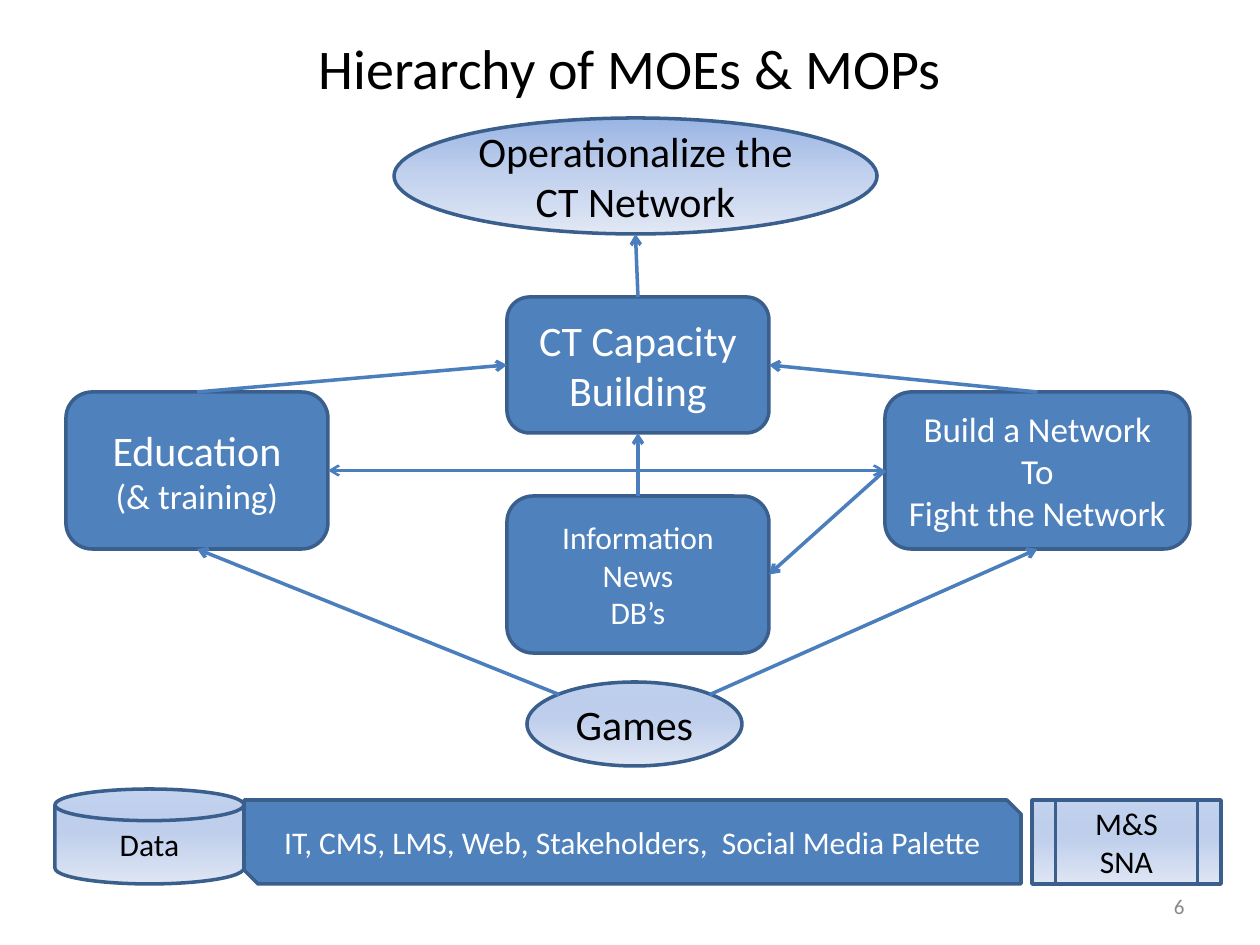
from dataclasses import dataclass

from lxml import etree
from pptx import Presentation
from pptx.dml.color import RGBColor
from pptx.enum.shapes import MSO_CONNECTOR, MSO_SHAPE
from pptx.enum.text import MSO_ANCHOR, PP_ALIGN
from pptx.oxml.ns import qn
from pptx.util import Emu, Pt

EMU_PER_PX = 914400 / 126
FONT = "Calibri"
COLORS = {
    "black": "000000",
    "white": "FFFFFF",
    "number": "898989",
    "block": "4F81BD",
    "outline": "3A5F8C",
    "arrow": "4B7EBC",
}
GRADIENT = [(0, "9AB5E4"), (50, "C2D1ED"), (100, "E1E8F5")]

ELLIPSE = MSO_SHAPE.OVAL
ROUNDED = MSO_SHAPE.ROUNDED_RECTANGLE
SNIPPED = MSO_SHAPE.SNIP_2_DIAG_RECTANGLE
DISK = MSO_SHAPE.FLOWCHART_MAGNETIC_DISK
PROCESS = MSO_SHAPE.FLOWCHART_PREDEFINED_PROCESS
STRAIGHT = MSO_CONNECTOR.STRAIGHT
CURVE = MSO_CONNECTOR.CURVE
CENTER = PP_ALIGN.CENTER
RIGHT = PP_ALIGN.RIGHT
MIDDLE = MSO_ANCHOR.MIDDLE

# Connection sites as fractions of a node's width and height
SITES = {
    "top": (0.5, 0),
    "bottom": (0.5, 1),
    "left": (0, 0.5),
    "right": (1, 0.5),
    "upper left": (0.15, 0.15),
    "upper right": (0.85, 0.15),
}


@dataclass(frozen=True)
class Line:
    text: str
    size: int


@dataclass(frozen=True)
class Node:
    kind: MSO_SHAPE
    left: int
    top: int
    width: int
    height: int
    lines: tuple[Line, ...]
    gradient: bool = False
    first_alpha: int = 100

    def site(self, name: str) -> tuple[Emu, Emu]:
        across, down = SITES[name]
        return px(self.left + across * self.width), px(self.top + down * self.height)


@dataclass(frozen=True)
class Link:
    start: str
    start_site: str
    end: str
    end_site: str
    kind: MSO_CONNECTOR = STRAIGHT
    width: float = 2
    both_ends: bool = False


def same_size(size: int, *texts: str) -> tuple[Line, ...]:
    return tuple(Line(text, size) for text in texts)


NODES = {
    "goal": Node(ELLIPSE, 394, 118, 483, 116,
                 same_size(24, "Operationalize the CT Network"), True),
    "capacity": Node(ROUNDED, 507, 297, 262, 136, same_size(24, "CT Capacity Building")),
    "education": Node(ROUNDED, 66, 392, 262, 157,
                      (Line("Education", 24), Line("(& training)", 20))),
    "network": Node(ROUNDED, 885, 392, 305, 157,
                    same_size(20, "Build a Network", "To", "Fight the Network")),
    "information": Node(ROUNDED, 507, 496, 262, 157,
                        same_size(18, "Information", "News", "DB’s")),
    "games": Node(ELLIPSE, 527, 682, 215, 84, same_size(24, "Games"), True, 61),
    "platform": Node(SNIPPED, 244, 800, 777, 84,
                     same_size(18, "IT, CMS, LMS, Web, Stakeholders,  Social Media Palette")),
    "data": Node(DISK, 55, 789, 189, 95, same_size(18, "Data"), True, 56),
    "modelling": Node(PROCESS, 1032, 800, 189, 84, same_size(18, "M&S", "SNA"), True, 56),
}

LINKS = [
    Link("education", "right", "network", "left", CURVE, 1.5, True),
    Link("education", "top", "capacity", "left"),
    Link("capacity", "top", "goal", "bottom"),
    Link("network", "top", "capacity", "right"),
    Link("information", "top", "capacity", "bottom"),
    Link("games", "upper right", "network", "bottom"),
    Link("games", "upper left", "education", "bottom"),
    Link("network", "left", "information", "right"),
]


def px(length: float) -> Emu:
    return Emu(round(length * EMU_PER_PX))


def rgb(name: str) -> RGBColor:
    return RGBColor.from_string(COLORS[name])


def write_lines(shape, lines: tuple[Line, ...], color: str, align: PP_ALIGN = CENTER) -> None:
    frame = shape.text_frame
    frame.word_wrap = True
    frame.vertical_anchor = MIDDLE
    frame.text = "\n".join(line.text for line in lines)
    for paragraph, line in zip(frame.paragraphs, lines):
        paragraph.alignment = align
        for run in paragraph.runs:
            run.font.name = FONT
            run.font.size = Pt(line.size)
            run.font.color.rgb = rgb(color)


def fill_gradient(shape, first_alpha: int) -> None:
    """Fill from top to bottom, with the first stop as opaque as given in percent."""
    shape.fill.gradient()
    shape.fill.gradient_angle = 270
    stops = shape._element.spPr.find(qn("a:gradFill")).find(qn("a:gsLst"))
    for stop in list(stops):
        stops.remove(stop)
    for position, color in GRADIENT:
        stop = etree.SubElement(stops, qn("a:gs"), pos=str(position * 1000))
        value = etree.SubElement(stop, qn("a:srgbClr"), val=color)
        if position == 0 and first_alpha < 100:
            etree.SubElement(value, qn("a:alpha"), val=str(first_alpha * 1000))


def draw_node(page, node: Node) -> None:
    shape = page.shapes.add_shape(
        node.kind, px(node.left), px(node.top), px(node.width), px(node.height))
    shape.shadow.inherit = False
    shape.line.color.rgb = rgb("outline")
    shape.line.width = Pt(2)
    if node.gradient:
        fill_gradient(shape, node.first_alpha)
    else:
        shape.fill.solid()
        shape.fill.fore_color.rgb = rgb("block")
    write_lines(shape, node.lines, "black" if node.gradient else "white")


def draw_link(page, link: Link) -> None:
    start = NODES[link.start].site(link.start_site)
    end = NODES[link.end].site(link.end_site)
    connector = page.shapes.add_connector(link.kind, *start, *end)
    connector.line.color.rgb = rgb("arrow")
    connector.line.width = Pt(link.width)
    outline = connector.line._get_or_add_ln()
    for tag in ("a:headEnd", "a:tailEnd") if link.both_ends else ("a:tailEnd",):
        etree.SubElement(outline, qn(tag), type="arrow")
    etree.SubElement(connector._element.spPr, qn("a:effectLst"))


def draw_text(page, left: int, top: int, width: int, height: int,
              line: Line, color: str, align: PP_ALIGN) -> None:
    box = page.shapes.add_textbox(px(left), px(top), px(width), px(height))
    write_lines(box, (line,), color, align)


def main() -> None:
    deck = Presentation()
    deck.slide_width, deck.slide_height = px(1260), px(945)
    page = deck.slides.add_slide(deck.slide_layouts[6])
    draw_text(page, 63, 18, 1134, 98, Line("Hierarchy of MOEs & MOPs", 32), "black", CENTER)
    for node in NODES.values():
        draw_node(page, node)
    for link in LINKS:
        draw_link(page, link)
    draw_text(page, 903, 881, 294, 50, Line("6", 12), "number", RIGHT)
    deck.save("out.pptx")


if __name__ == "__main__":
    main()
